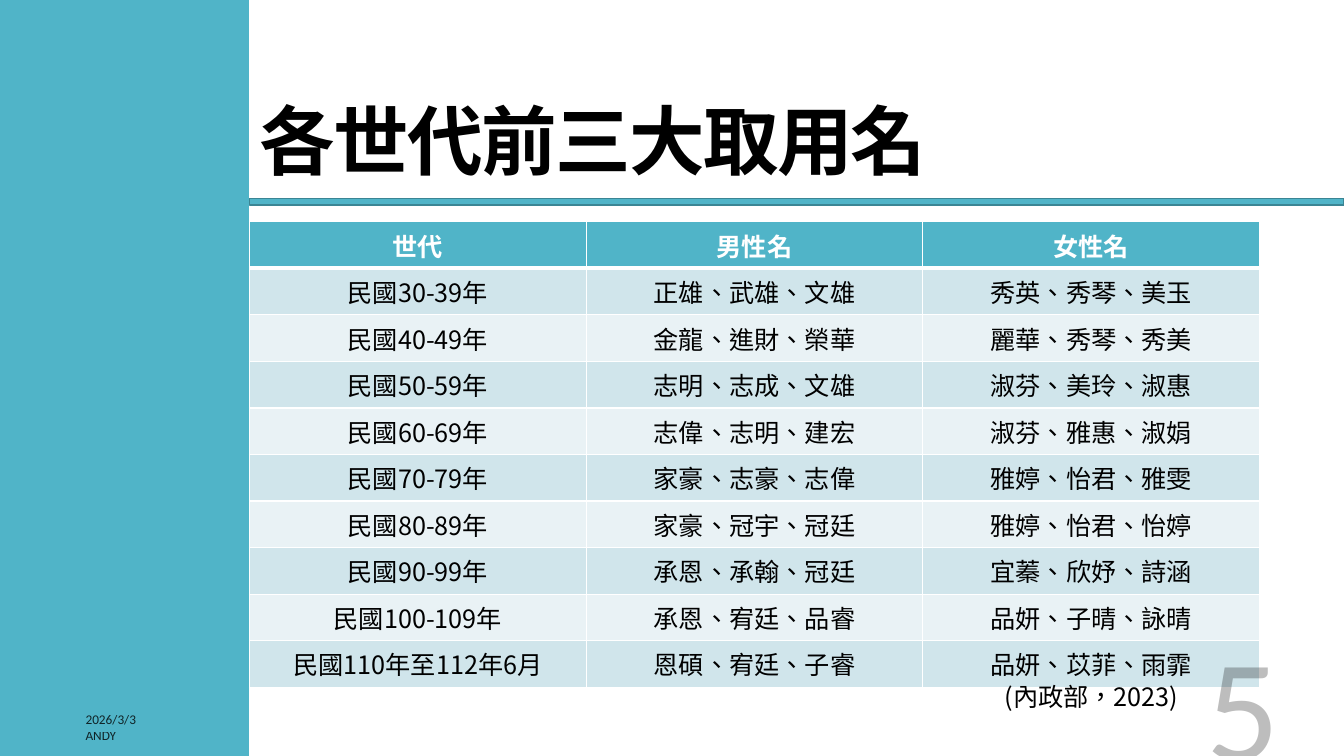
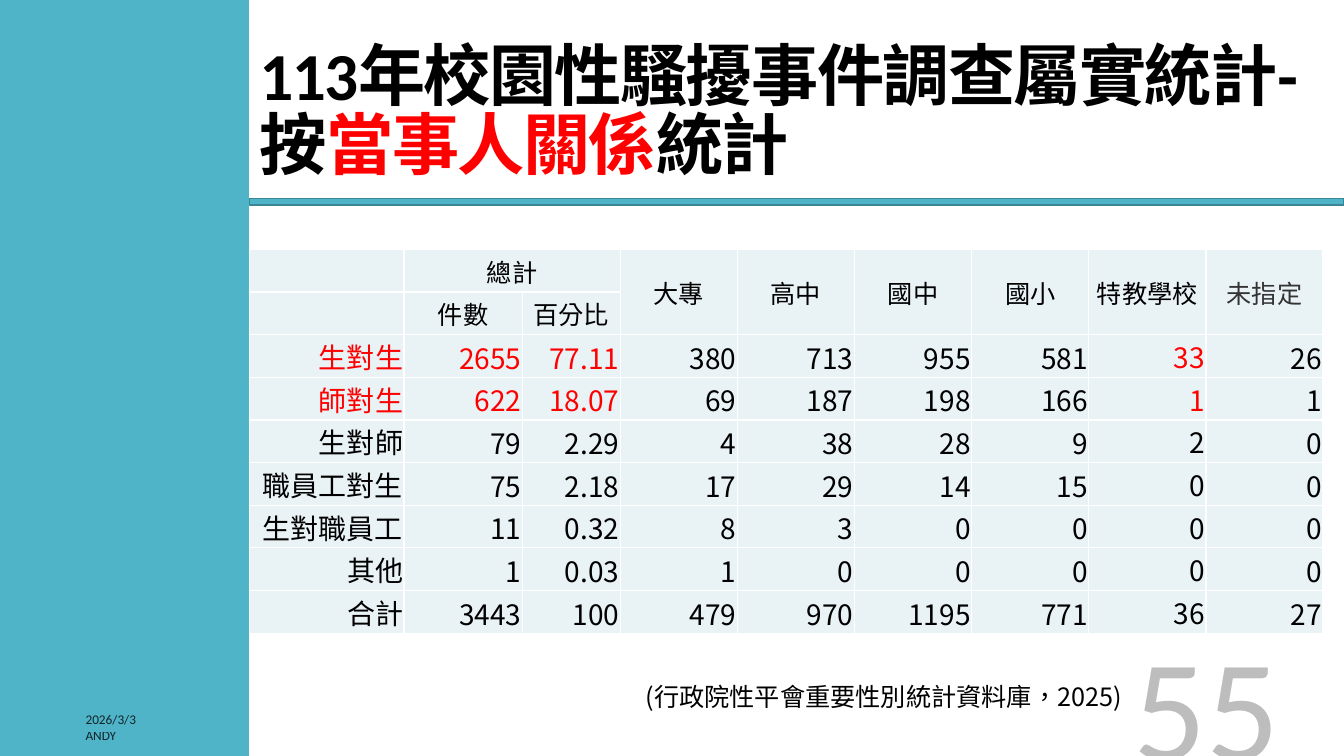
from pptx import Presentation
from pptx.dml.color import RGBColor
from pptx.enum.shapes import MSO_SHAPE
from pptx.enum.text import MSO_ANCHOR, PP_ALIGN
from pptx.oxml.ns import qn
from pptx.util import Inches, Pt
from lxml import etree

RECTANGLE = MSO_SHAPE.RECTANGLE
TOP, MIDDLE, BOTTOM = MSO_ANCHOR.TOP, MSO_ANCHOR.MIDDLE, MSO_ANCHOR.BOTTOM
LEFT, CENTER, RIGHT = PP_ALIGN.LEFT, PP_ALIGN.CENTER, PP_ALIGN.RIGHT

COLORS = {
    "teal": "50B4C8", "teal_edge": "3B8594", "row_dark": "D0E5EB",
    "row_light": "E9F2F5", "white": "FFFFFF", "black": "000000",
    "gray": "333333", "red": "FF0000",
}
LATIN, CJK = "Calibri", "Noto Sans CJK SC"
SLIDE_W, SLIDE_H = Inches(13.333), Inches(7.5)
CONTENT_LEFT = 18.57  # percent of the slide's width

NAME_HEADER = ("世代", "男性名", "女性名")
NAME_ROWS = (
    ("民國30-39年", "正雄、武雄、文雄", "秀英、秀琴、美玉"),
    ("民國40-49年", "金龍、進財、榮華", "麗華、秀琴、秀美"),
    ("民國50-59年", "志明、志成、文雄", "淑芬、美玲、淑惠"),
    ("民國60-69年", "志偉、志明、建宏", "淑芬、雅惠、淑娟"),
    ("民國70-79年", "家豪、志豪、志偉", "雅婷、怡君、雅雯"),
    ("民國80-89年", "家豪、冠宇、冠廷", "雅婷、怡君、怡婷"),
    ("民國90-99年", "承恩、承翰、冠廷", "宜蓁、欣妤、詩涵"),
    ("民國100-109年", "承恩、宥廷、品睿", "品妍、子晴、詠晴"),
    ("民國110年至112年6月", "恩碩、宥廷、子睿", "品妍、苡菲、雨霏"),
)

SCHOOLS = ("大專", "高中", "國中", "國小", "特教學校", "未指定")
CASE_HEADER = (
    ("", "總計", "") + SCHOOLS,
    ("", "件數", "百分比") + ("",) * len(SCHOOLS),
)
CASE_ROWS = (
    ("生對生", "2655", "77.11", "380", "713", "955", "581", "33", "26"),
    ("師對生", "622", "18.07", "69", "187", "198", "166", "1", "1"),
    ("生對師", "79", "2.29", "4", "38", "28", "9", "2", "0"),
    ("職員工對生", "75", "2.18", "17", "29", "14", "15", "0", "0"),
    ("生對職員工", "11", "0.32", "8", "3", "0", "0", "0", "0"),
    ("其他", "1", "0.03", "1", "0", "0", "0", "0", "0"),
    ("合計", "3443", "100", "479", "970", "1195", "771", "36", "27"),
)
CASE_WIDTHS = (1.53, 1.17, 0.97) + (1.16,) * len(SCHOOLS)
RED_ROWS, RED_COLUMNS = (0, 1), (0, 1, 2, 7)
CENTERED_COLUMNS = (0, 7)


def rgb(name):
    return RGBColor.from_string(COLORS[name])


def area(left, top, width, height):
    """Turn percentages of the slide into a box."""
    return (round(SLIDE_W * left / 100), round(SLIDE_H * top / 100),
            round(SLIDE_W * width / 100), round(SLIDE_H * height / 100))


def add_run(paragraph, text, size, color="black", latin=CJK, bold=False,
            spacing=None, opacity=None):
    run = paragraph.add_run()
    run.text = text
    font = run.font
    font.size, font.bold, font.name = Pt(size), bold, latin
    font.color.rgb = rgb(color)
    props = run._r.get_or_add_rPr()
    props.set("lang", "zh-TW")
    if spacing is not None:
        props.set("spc", str(round(spacing * 100)))
    if opacity is not None:
        tint = props.find(qn("a:solidFill"))[0]
        etree.SubElement(tint, qn("a:alpha")).set("val", str(opacity * 1000))
    east_asian = etree.Element(qn("a:ea"))
    east_asian.set("typeface", CJK)
    props.find(qn("a:latin")).addnext(east_asian)


def add_text(slide, box, runs, anchor=MIDDLE, align=LEFT, line_spacing=None,
             **style):
    """Write (text, color) runs into one paragraph."""
    frame = slide.shapes.add_textbox(*box).text_frame
    frame.word_wrap = True
    frame.vertical_anchor = anchor
    paragraph = frame.paragraphs[0]
    paragraph.alignment = align
    if line_spacing:
        paragraph.line_spacing = line_spacing
    for text, color in runs:
        add_run(paragraph, text, color=color, **style)


def add_block(slide, box, edge=None):
    block = slide.shapes.add_shape(RECTANGLE, *box)
    block.shadow.inherit = False
    block.fill.solid()
    block.fill.fore_color.rgb = rgb("teal")
    if edge:
        block.line.color.rgb = rgb(edge)
        block.line.width = Pt(1)
    else:
        block.line.fill.background()


def add_grid(slide, box, row_count, weights):
    """Add a plain table whose columns share the box by weight."""
    left, top, width, height = box
    grid = slide.shapes.add_table(row_count, len(weights), *box).table
    grid.horz_banding = False
    for column, weight in zip(grid.columns, weights):
        column.width = round(width * weight / sum(weights))
    for row in grid.rows:
        row.height = round(height / row_count)
    return grid


def style_cell(cell, fill, bottom_border=1):
    props = cell._tc.get_or_add_tcPr()
    widths = {"lnL": 1, "lnR": 1, "lnT": 1, "lnB": bottom_border}
    for side, width in widths.items():
        border = etree.SubElement(props, qn(f"a:{side}"))
        border.set("w", str(Pt(width)))
        paint = etree.SubElement(border, qn("a:solidFill"))
        etree.SubElement(paint, qn("a:srgbClr")).set("val", COLORS["white"])
    cell.fill.solid()
    cell.fill.fore_color.rgb = rgb(fill)


def write_cell(cell, text, align, anchor, size=18, color="black", bold=False):
    cell.vertical_anchor = anchor
    paragraph = cell.text_frame.paragraphs[0]
    paragraph.alignment = align
    if text:
        add_run(paragraph, text, size, color, bold=bold)


def add_name_table(slide, box):
    rows = (NAME_HEADER,) + NAME_ROWS
    grid = add_grid(slide, box, len(rows), (1, 1, 1))
    for r, row in enumerate(rows):
        header = r == 0
        fill = "teal" if header else ("row_light", "row_dark")[r % 2]
        for c, text in enumerate(row):
            cell = grid.cell(r, c)
            # Both cells that share the header's lower edge get a thick line
            style_cell(cell, fill, bottom_border=3 if header else 1)
            if r == 1:
                edge = cell._tc.tcPr.find(qn("a:lnT"))
                edge.set("w", str(Pt(3)))
            write_cell(cell, text, CENTER, MIDDLE, bold=header,
                       color="white" if header else "black")


def add_case_table(slide, box):
    header_count = len(CASE_HEADER)
    rows = CASE_HEADER + CASE_ROWS
    grid = add_grid(slide, box, len(rows), CASE_WIDTHS)
    for r, row in enumerate(rows):
        for c, text in enumerate(row):
            cell = grid.cell(r, c)
            style_cell(cell, "row_light")
            cell.margin_left = cell.margin_top = cell.margin_right = Inches(0.01)
            cell.margin_bottom = 0
            if r < header_count:
                color = "gray" if text == SCHOOLS[-1] else "black"
                write_cell(cell, text, CENTER, MIDDLE, color=color)
            else:
                red = r - header_count in RED_ROWS and c in RED_COLUMNS
                anchor = MIDDLE if c in CENTERED_COLUMNS else BOTTOM
                write_cell(cell, text, RIGHT, anchor, size=20,
                           color="red" if red else "black")
    # Joined headings: the total over two columns, schools over two rows
    grid.cell(0, 1).merge(grid.cell(0, 2))
    for c in range(3, len(CASE_WIDTHS)):
        grid.cell(0, c).merge(grid.cell(1, c))


def add_footer(slide, page):
    footer = {"size": 9.5, "latin": LATIN, "opacity": 80}
    add_text(slide, area(5.63, 93.47, 33.75, 3.33),
             [("2026/3/3", "black")], **footer)
    add_text(slide, area(5.63, 95.6, 41.25, 3.33),
             [("ANDY", "black")], **footer)
    add_text(slide, area(71.93, 84.67, 24, 20.4), [(page, "black")],
             anchor=BOTTOM, align=RIGHT, size=103, latin=LATIN, opacity=25)


def add_table_slide(deck, title, title_box, title_size, add_table, table_box,
                    source, source_left, page):
    slide = deck.slides.add_slide(deck.slide_layouts[6])
    # Rule under the title and side band
    add_block(slide, area(CONTENT_LEFT, 26.27, 100 - CONTENT_LEFT, 0.87),
              edge="teal_edge")
    add_block(slide, area(0, 0, 18.53, 100))
    add_text(slide, title_box, title, size=title_size, latin=LATIN, bold=True,
             spacing=-1.2, line_spacing=0.85)
    add_table(slide, table_box)
    add_footer(slide, page)
    # Source of the figures
    add_text(slide, area(source_left, 89.4, 100 - source_left, 5.33),
             [(source, "black")], anchor=TOP, size=18)


def main():
    deck = Presentation()
    deck.slide_width, deck.slide_height = SLIDE_W, SLIDE_H
    add_table_slide(
        deck,
        title=[("各世代前三大取用名", "black")],
        title_box=area(CONTENT_LEFT, 7.33, 75.15, 24.13), title_size=54,
        add_table=add_name_table,
        table_box=area(CONTENT_LEFT, 29.33, 75.15, 61.6),
        source="(內政部，2023)", source_left=74, page="5")
    add_table_slide(
        deck,
        title=[("113年校園性騷擾事件調查屬實統計-按", "black"),
               ("當事人關係", "red"), ("統計", "black")],
        title_box=area(CONTENT_LEFT, 3.07, 80.7, 24.13), title_size=48,
        add_table=add_case_table,
        table_box=area(CONTENT_LEFT, 32.97, 79.88, 50.8),
        source="(行政院性平會重要性別統計資料庫，2025)", source_left=47.3,
        page="55")
    deck.save("out.pptx")


if __name__ == "__main__":
    main()
